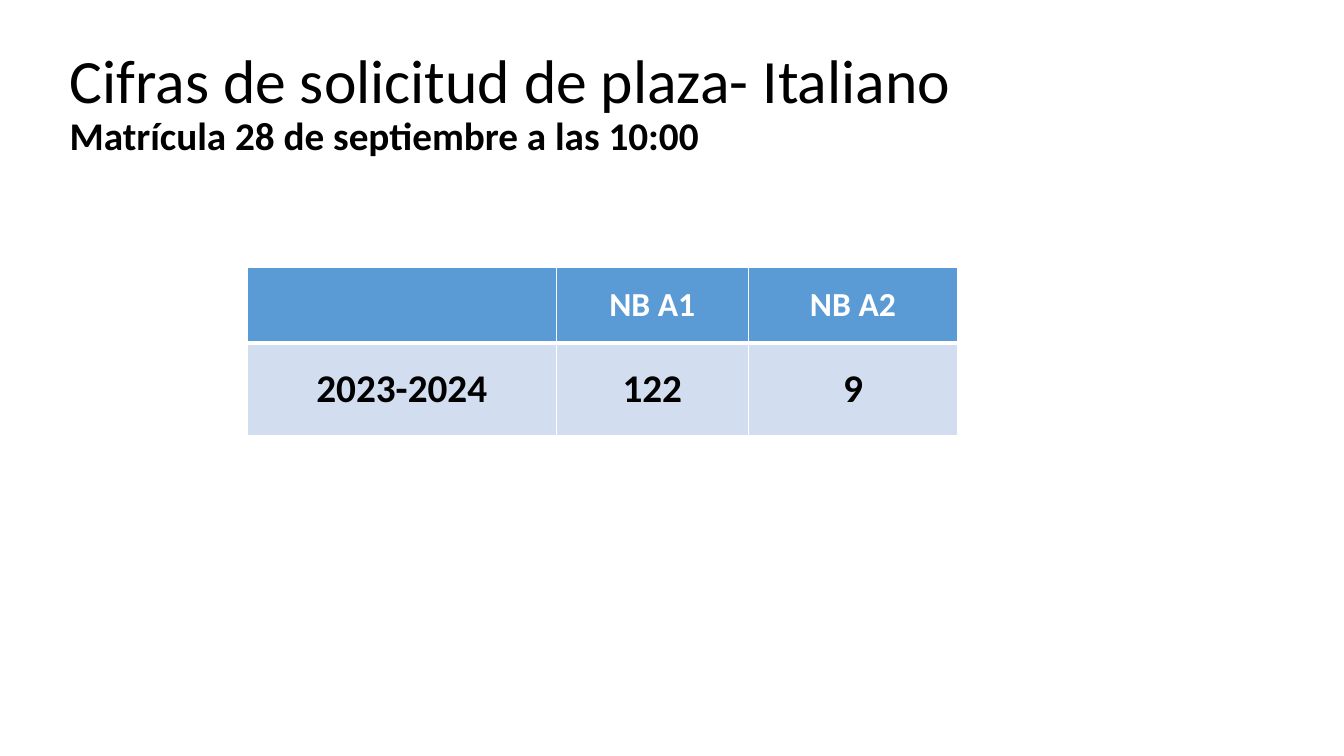
from lxml.etree import SubElement
from pptx import Presentation
from pptx.dml.color import RGBColor
from pptx.enum.text import MSO_ANCHOR, MSO_AUTO_SIZE, PP_ALIGN
from pptx.oxml.ns import qn
from pptx.util import Inches, Pt


def tint(code):
    return RGBColor.from_string(code)


class Deck:
    face = "Calibri"
    black, white = "000000", "FFFFFF"
    blue, pale = "5B9BD5", "D2DEEF"

    def __init__(self):
        self.show = Presentation()
        self.show.slide_width = Inches(13.33)
        self.show.slide_height = Inches(7.5)
        self.slide = self.show.slides.add_slide(self.show.slide_layouts[5])

    def style(self, run, size, color, bold):
        font = run.font
        font.name, font.size, font.bold = self.face, Pt(size), bold
        font.color.rgb = tint(color)

    def place(self, shape, box):
        shape.left, shape.top, shape.width, shape.height = map(Inches, box)

    def title(self, head, sub, box):
        shape = self.slide.shapes.title
        self.place(shape, box)
        frame = shape.text_frame
        frame.word_wrap = True
        frame.auto_size = MSO_AUTO_SIZE.NONE
        frame.vertical_anchor = MSO_ANCHOR.MIDDLE
        line = frame.paragraphs[0]
        line.text = f"{head}\v{sub}"
        line.alignment = PP_ALIGN.LEFT
        line.line_spacing = 0.9
        first, last = line.runs
        self.style(first, 44, self.black, False)
        self.style(last, 28, self.black, True)

    def border(self, cell, base):
        props = cell._tc.get_or_add_tcPr()
        sides = {"L": 1, "R": 1, "T": 1, "B": base}
        for spot, (side, width) in enumerate(sides.items()):
            edge = SubElement(props, qn(f"a:ln{side}"), w=str(Pt(width)))
            fill = SubElement(edge, qn("a:solidFill"))
            SubElement(fill, qn("a:srgbClr"), val=self.white)
            props.insert(spot, edge)

    def cell(self, cell, text, head):
        cell.fill.solid()
        cell.fill.fore_color.rgb = tint(self.blue if head else self.pale)
        cell.vertical_anchor = MSO_ANCHOR.MIDDLE
        self.border(cell, 3 if head else 1)
        line = cell.text_frame.paragraphs[0]
        line.text = text
        line.alignment = PP_ALIGN.CENTER
        size, color = (24, self.white) if head else (28, self.black)
        for run in line.runs:
            self.style(run, size, color, True)

    def table(self, data, left, top, wide, high):
        box = map(Inches, (left, top, sum(wide), sum(high)))
        grid = self.slide.shapes.add_table(len(high), len(wide), *box).table
        for col, width in zip(grid.columns, wide):
            col.width = Inches(width)
        for r, (row, height) in enumerate(zip(grid.rows, high)):
            row.height = Inches(height)
            for cell, text in zip(row.cells, data[r]):
                self.cell(cell, text, r == 0)


def main():
    deck = Deck()
    deck.title("Cifras de solicitud de plaza- Italiano ",
               "Matrícula 28 de septiembre a las 10:00",
               (0.59, 0.31, 11.5, 1.45))
    data = [("", "NB A1", "NB A2"), ("2023-2024", "122", "9")]
    deck.table(data, 2.45, 2.65, (3.07, 1.9, 2.08), (0.75, 0.92))
    deck.show.save("out.pptx")


if __name__ == "__main__":
    main()
